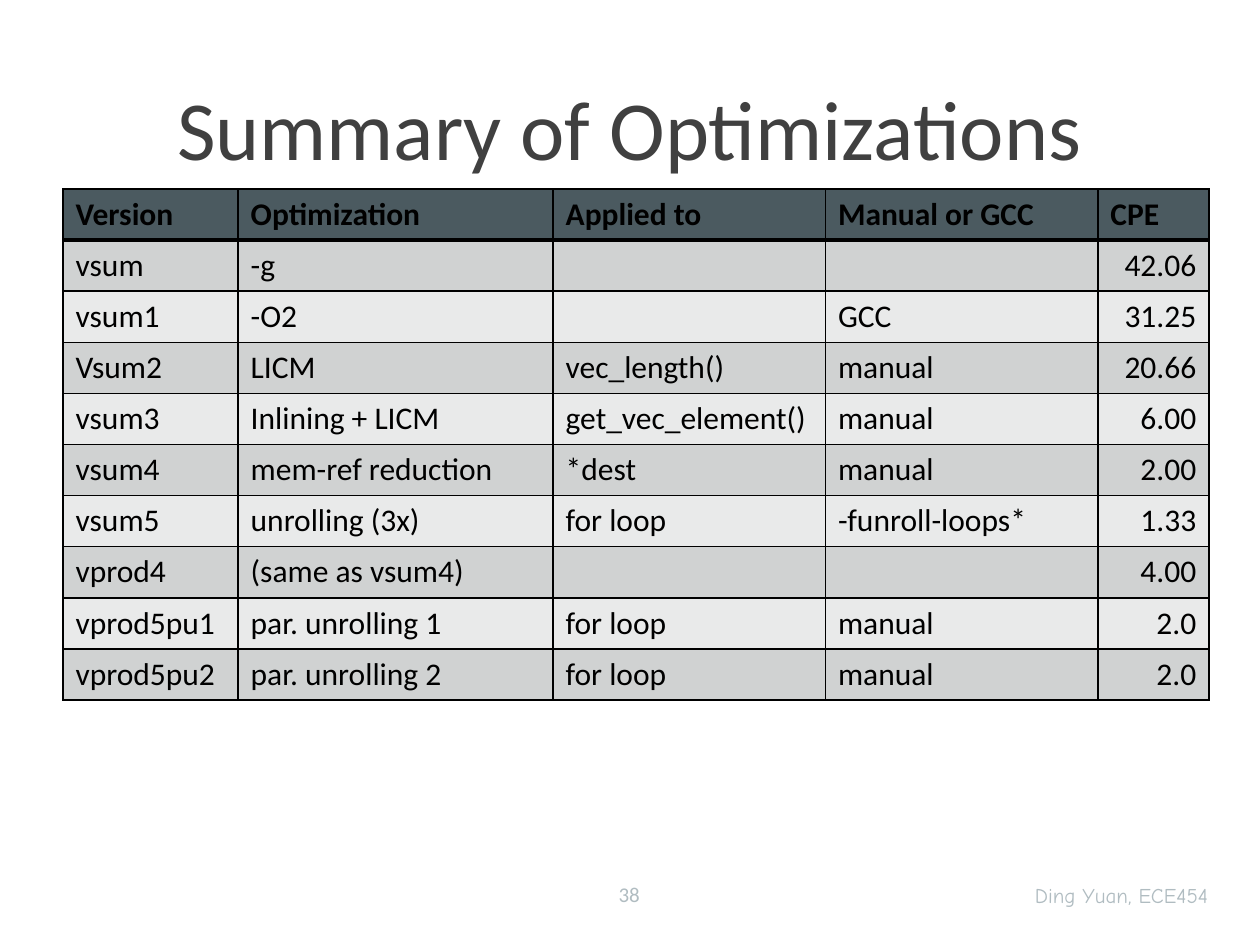
from dataclasses import dataclass

from lxml.etree import SubElement
from pptx import Presentation
from pptx.dml.color import RGBColor
from pptx.enum.text import MSO_ANCHOR as Anchor, PP_ALIGN as Align
from pptx.oxml.ns import qn
from pptx.util import Cm, Pt

COLORS = {
    "title": "404040",
    "footer": "B0BCC1",
    "ink": "000000",
    "header": "4B5A60",
    "odd": "D0D2D2",
    "even": "E9EAEA",
}
BODY_FONT = "Calibri"
COLUMN_WIDTHS = (3.53, 6.35, 5.49, 5.49, 2.24)
ROW_HEIGHT = 1.03


@dataclass
class Caption:
    text: str
    left: float
    top: float
    width: float
    height: float
    size: int
    color: str
    align: Align
    font: str = BODY_FONT


@dataclass
class Version:
    name: str
    optimization: str
    target: str
    done_by: str
    cpe: str

    def values(self) -> tuple:
        return self.name, self.optimization, self.target, self.done_by, self.cpe


CAPTIONS = (
    Caption("Summary of Optimizations", 2.49, 0.69, 20.4, 3.73, 48, "title", Align.CENTER),
    Caption("Ding Yuan, ECE454", 16.56, 17.7, 8.05, 0.71, 12, "footer", Align.RIGHT, "Comic Neue"),
    Caption("38", 11.63, 17.65, 2.11, 0.76, 12, "footer", Align.CENTER),
)
HEADINGS = Version("Version", "Optimization", "Applied to", "Manual or GCC", "CPE")
VERSIONS = (
    Version("vsum", "-g", "", "", "42.06"),
    Version("vsum1", "-O2", "", "GCC", "31.25"),
    Version("Vsum2", "LICM", "vec_length()", "manual", "20.66"),
    Version("vsum3", "Inlining + LICM", "get_vec_element()", "manual", "6.00"),
    Version("vsum4", "mem-ref reduction", "*dest", "manual", "2.00"),
    Version("vsum5", "unrolling (3x)", "for loop", "-funroll-loops*", "1.33"),
    Version("vprod4", "(same as vsum4)", "", "", "4.00"),
    Version("vprod5pu1", "par. unrolling 1", "for loop", "manual", "2.0"),
    Version("vprod5pu2", "par. unrolling 2", "for loop", "manual", "2.0"),
)


def style(paragraph, font: str, size: int, color: str, bold: bool = False) -> None:
    paragraph.font.name = font
    paragraph.font.size = Pt(size)
    paragraph.font.bold = bold
    paragraph.font.color.rgb = RGBColor.from_string(COLORS[color])


def add_caption(slide, caption: Caption) -> None:
    box = slide.shapes.add_textbox(
        Cm(caption.left), Cm(caption.top), Cm(caption.width), Cm(caption.height))
    frame = box.text_frame
    frame.word_wrap = True
    frame.vertical_anchor = Anchor.MIDDLE
    frame.text = caption.text
    paragraph = frame.paragraphs[0]
    paragraph.alignment = caption.align
    style(paragraph, caption.font, caption.size, caption.color)


def set_borders(cell, widths: dict) -> None:
    properties = cell._tc.get_or_add_tcPr()
    for position, (side, width) in enumerate(widths.items()):
        line = SubElement(properties, qn(f"a:ln{side}"), w=str(Pt(width)))
        fill = SubElement(line, qn("a:solidFill"))
        SubElement(fill, qn("a:srgbClr"), val=COLORS["ink"])
        properties.insert(position, line)


def fill_row(table, index: int, version: Version) -> None:
    is_header = index == 0
    fill = "header" if is_header else "odd" if index % 2 else "even"
    widths = {
        "L": 1,
        "R": 1,
        "T": 3 if index == 1 else 1,
        "B": 3 if is_header else 1,
    }
    last_column = len(COLUMN_WIDTHS) - 1
    for column, value in enumerate(version.values()):
        cell = table.cell(index, column)
        cell.text = value
        cell.fill.solid()
        cell.fill.fore_color.rgb = RGBColor.from_string(COLORS[fill])
        set_borders(cell, widths)
        paragraph = cell.text_frame.paragraphs[0]
        if column == last_column and not is_header:
            paragraph.alignment = Align.RIGHT
        style(paragraph, BODY_FONT, 18, "ink", is_header)


def add_summary(slide) -> None:
    rows = (HEADINGS, *VERSIONS)
    table = slide.shapes.add_table(
        len(rows), len(COLUMN_WIDTHS), Cm(1.27), Cm(3.81),
        Cm(sum(COLUMN_WIDTHS)), Cm(ROW_HEIGHT * len(rows))).table
    for column, width in zip(table.columns, COLUMN_WIDTHS):
        column.width = Cm(width)
    for index, version in enumerate(rows):
        table.rows[index].height = Cm(ROW_HEIGHT)
        fill_row(table, index, version)


def main() -> None:
    deck = Presentation()
    deck.slide_width = Cm(25.4)
    deck.slide_height = Cm(19.05)
    slide = deck.slides.add_slide(deck.slide_layouts[6])
    title, *footers = CAPTIONS
    add_caption(slide, title)
    add_summary(slide)
    for footer in footers:
        add_caption(slide, footer)
    deck.save("out.pptx")


if __name__ == "__main__":
    main()
